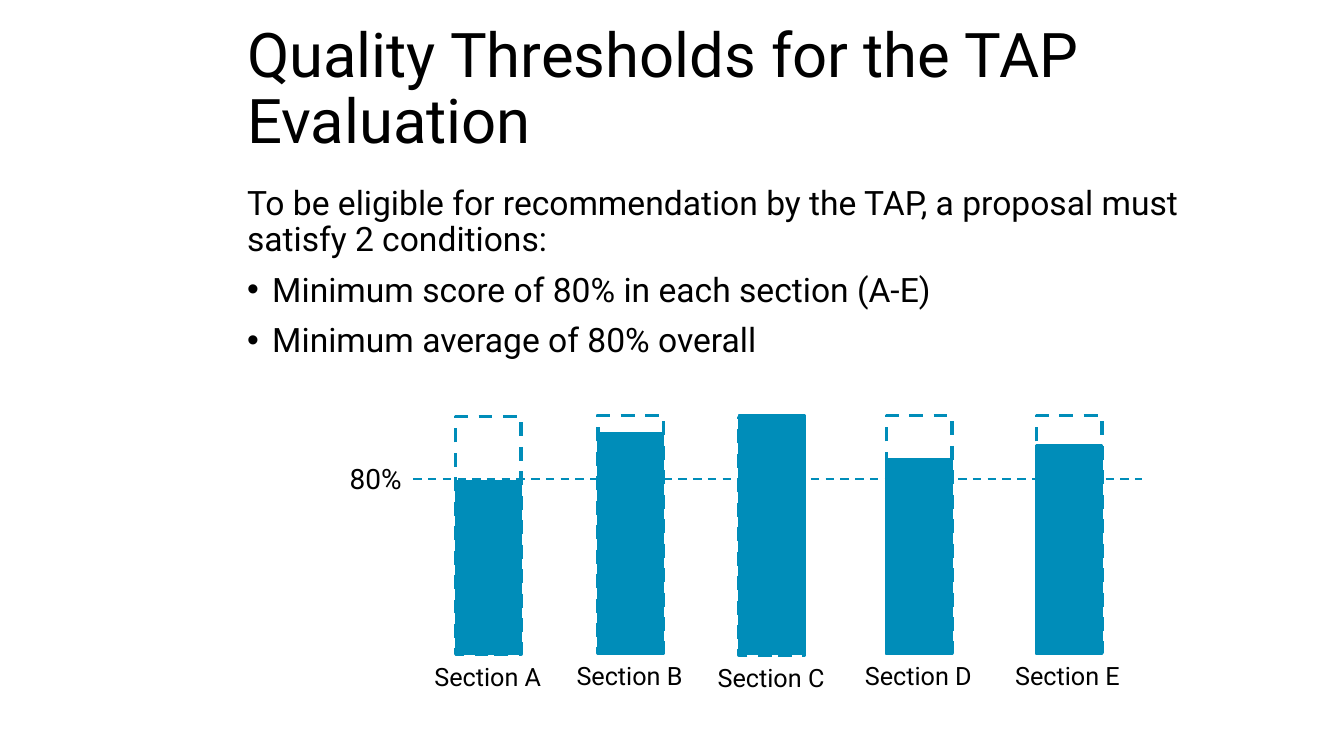
"""Build the slide on quality thresholds for the TAP evaluation."""
from lxml.etree import SubElement
from pptx import Presentation
from pptx.dml.color import RGBColor
from pptx.enum.dml import MSO_LINE
from pptx.enum.shapes import MSO_CONNECTOR, MSO_SHAPE
from pptx.enum.text import MSO_ANCHOR, MSO_AUTO_SIZE, PP_ALIGN
from pptx.oxml.ns import qn
from pptx.util import Inches, Pt

BLUE = RGBColor(0x00, 0x8D, 0xB9)
BLACK = RGBColor(0x00, 0x00, 0x00)
BAR_WIDTH = 0.65
FULL_HEIGHT = 2.36
BASELINE = 6.49


def place(shape, left, top, width, height):
    shape.left, shape.top = Inches(left), Inches(top)
    shape.width, shape.height = Inches(width), Inches(height)


def style(para, size):
    para.alignment = PP_ALIGN.LEFT
    para.font.name = "Roboto"
    para.font.size = Pt(size)
    para.font.color.rgb = BLACK


deck = Presentation()
deck.slide_width, deck.slide_height = Inches(13.33), Inches(7.5)
page = deck.slides.add_slide(deck.slide_layouts[1])

title = page.shapes.title
place(title, 2.35, 0.45, 10.7, 0.9)
title.text_frame.text = "Quality Thresholds for the TAP Evaluation"
title.text_frame.auto_size = MSO_AUTO_SIZE.NONE
title.text_frame.vertical_anchor = MSO_ANCHOR.MIDDLE
title.text_frame.paragraphs[0].line_spacing = 0.9
style(title.text_frame.paragraphs[0], 44)

conditions = page.placeholders[1]
place(conditions, 2.35, 1.8, 10.07, 1.88)
conditions.text_frame.text = "\n".join([
    "To be eligible for recommendation by the TAP, a proposal must satisfy 2 conditions:",
    "Minimum score of 80% in each section (A-E)",
    "Minimum average of 80% overall",
])
conditions.text_frame.auto_size = MSO_AUTO_SIZE.NONE
for index, para in enumerate(conditions.text_frame.paragraphs):
    para.line_spacing = 0.9
    para.space_before = Pt(10 if index else 0)
    properties = para._p.get_or_add_pPr()
    indent = Inches(0.25) if index else 0
    properties.set("marL", str(indent))
    properties.set("indent", str(-indent))
    if index:
        SubElement(properties, qn("a:buFont"), typeface="Arial")
        SubElement(properties, qn("a:buChar"), char="•")
    else:
        SubElement(properties, qn("a:buNone"))
    style(para, 24)

sections = [
    ("Section A", 4.52, 4.77, 4.13),
    ("Section B", 5.93, 4.30, 4.12),
    ("Section C", 7.33, 4.12, 4.14),
    ("Section D", 8.79, 4.55, 4.12),
    ("Section E", 10.28, 4.42, 4.12),
]
for name, left, score_top, full_top in sections:
    group = page.shapes.add_group_shape()
    for top, height, weight in [
        (score_top, BASELINE - score_top, 1.5),
        (full_top, FULL_HEIGHT, 2.5),
    ]:
        bar = group.shapes.add_shape(
            MSO_SHAPE.RECTANGLE, Inches(left), Inches(top), Inches(BAR_WIDTH), Inches(height))
        bar.shadow.inherit = False
        bar.line.color.rgb = BLUE
        bar.line.width = Pt(weight)
        if top == score_top and weight == 1.5:
            bar.fill.solid()
            bar.fill.fore_color.rgb = BLUE
        else:
            bar.fill.background()
            bar.line.dash_style = MSO_LINE.DASH
    label = group.shapes.add_textbox(
        Inches(left - 0.31), Inches(full_top + 2.38), Inches(1.26), Inches(0.4))
    label.text_frame.text = name
    label.text_frame.word_wrap = False
    style(label.text_frame.paragraphs[0], 18)

threshold_label = page.shapes.add_textbox(Inches(3.37), Inches(4.53), Inches(0.98), Inches(0.44))
threshold_label.text_frame.text = "80%"
threshold_label.text_frame.word_wrap = True
style(threshold_label.text_frame.paragraphs[0], 20)

threshold = page.shapes.add_connector(
    MSO_CONNECTOR.STRAIGHT, Inches(4.1), Inches(4.75), Inches(11.33), Inches(4.75))
threshold.line.color.rgb = BLUE
threshold.line.width = Pt(1.5)
threshold.line.dash_style = MSO_LINE.DASH
SubElement(threshold._element.spPr, qn("a:effectLst"))

deck.save("out.pptx")
